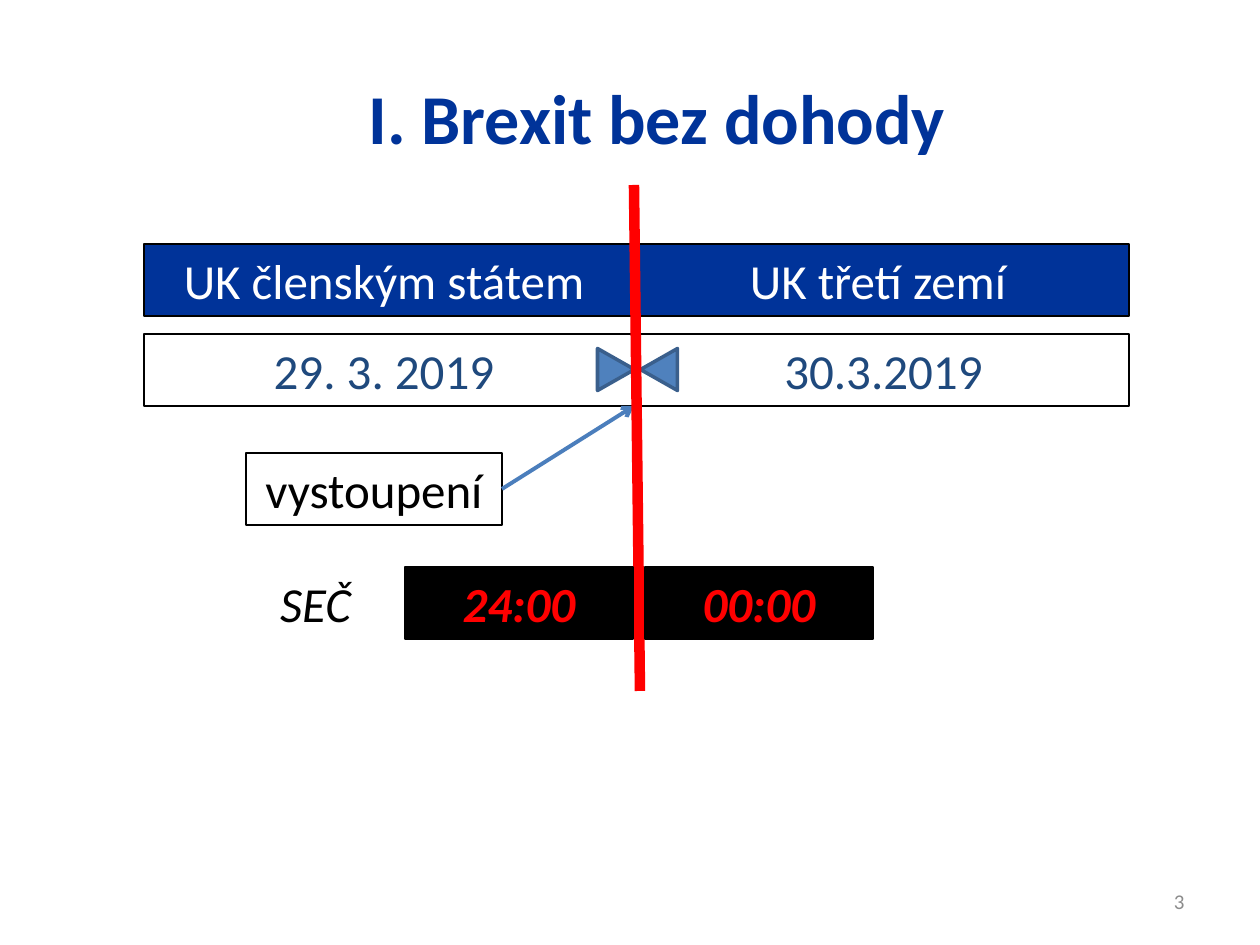
from dataclasses import dataclass

from lxml import etree
from pptx import Presentation
from pptx import util as u
from pptx.dml.color import RGBColor
from pptx.enum import shapes, text
from pptx.oxml.ns import qn

SCALE = 914400 / 126
NAVY, BLACK, WHITE, RED, INK = "003399", "000000", "FFFFFF", "FF0000", "1F497D"
ROW = 72


@dataclass
class Box:
    x: int
    y: int
    w: int
    words: str
    color: str
    fill: str = ""
    line: str = BLACK
    bold: bool = False
    italic: bool = False


@dataclass
class Line:
    start: tuple[int, int]
    end: tuple[int, int]
    color: str
    width: float
    arrow: bool = False


def px(n: int) -> u.Emu:
    return u.Emu(round(n * SCALE))


def rgb(code: str) -> RGBColor:
    return RGBColor.from_string(code)


def write(shape, words: str, size: int, color: str, align="CENTER", anchor="TOP", **style) -> None:
    frame = shape.text_frame
    frame.word_wrap = True
    frame.vertical_anchor = text.MSO_ANCHOR[anchor]
    para = frame.paragraphs[0]
    para.alignment = text.PP_ALIGN[align]
    run = para.add_run()
    run.text = words
    run.font.color.rgb = rgb(color)
    for key, val in {"name": "Calibri", "size": u.Pt(size), **style}.items():
        setattr(run.font, key, val)


def paint(shape, fill: str, line: str, width: float) -> None:
    shape.shadow.inherit = False
    if fill:
        shape.fill.solid()
        shape.fill.fore_color.rgb = rgb(fill)
    else:
        shape.fill.background()
    if line:
        shape.line.color.rgb = rgb(line)
        shape.line.width = u.Pt(width)
    else:
        shape.line.fill.background()


def draw_box(slide, box: Box) -> None:
    shape = slide.shapes.add_shape(
        shapes.MSO_SHAPE.RECTANGLE, px(box.x), px(box.y), px(box.w), px(ROW))
    paint(shape, box.fill, box.line, 1)
    write(shape, box.words, 28, box.color, bold=box.bold, italic=box.italic)


def draw_tip(slide, x: int, turn: int) -> None:
    tip = slide.shapes.add_shape(
        shapes.MSO_SHAPE.ISOSCELES_TRIANGLE, px(x), px(351), px(42), px(37))
    tip.rotation = turn
    paint(tip, "4F81BD", "3A5F8C", 2)


def draw_line(slide, line: Line) -> None:
    ends = [px(n) for n in line.start + line.end]
    shape = slide.shapes.add_connector(shapes.MSO_CONNECTOR.STRAIGHT, *ends)
    shape.line.color.rgb = rgb(line.color)
    shape.line.width = u.Pt(line.width)
    if line.arrow:
        etree.SubElement(shape.line._get_or_add_ln(), qn("a:tailEnd"), type="arrow")
    etree.SubElement(shape._element.spPr, qn("a:effectLst"))


def main() -> None:
    deck = Presentation()
    deck.slide_width, deck.slide_height = px(1260), px(945)
    slide = deck.slides.add_slide(deck.slide_layouts[5])

    # Title and page number
    title = slide.shapes.title
    place = {"left": 63, "top": 38, "width": 1172, "height": 157}
    for key, val in place.items():
        setattr(title, key, px(val))
    write(title, " I. Brexit bez dohody", 40, NAVY, anchor="MIDDLE", bold=True)
    page = slide.shapes.add_textbox(px(903), px(876), px(294), px(50))
    write(page, "3", 12, "8C8C8C", align="RIGHT", anchor="MIDDLE")

    # Status and date on each side of the exit, then the exit label
    left, right, half = 144, 638, 491
    for box in (
        Box(left, 244, half, "UK členským státem ", WHITE, NAVY),
        Box(right, 244, half, "UK třetí zemí ", WHITE, NAVY),
        Box(left, 334, half, "29. 3. 2019 ", INK),
        Box(right, 334, half, "30.3.2019", INK),
        Box(246, 453, 256, "vystoupení", BLACK),
    ):
        draw_box(slide, box)

    # Triangles meeting at the exit
    draw_tip(slide, 638, 270)
    draw_tip(slide, 595, 90)

    # Pointer and dividing line
    draw_line(slide, Line((502, 489), (634, 406), "4B7EBC", 2.25, arrow=True))
    draw_line(slide, Line((634, 185), (640, 691), RED, 6))

    # Clock times
    for box in (
        Box(405, 567, 228, "24:00", RED, BLACK, bold=True, italic=True),
        Box(246, 567, 139, "SEČ", BLACK, line="", italic=True),
        Box(645, 567, 228, "00:00", RED, BLACK, bold=True, italic=True),
    ):
        draw_box(slide, box)

    deck.save("out.pptx")


if __name__ == "__main__":
    main()
